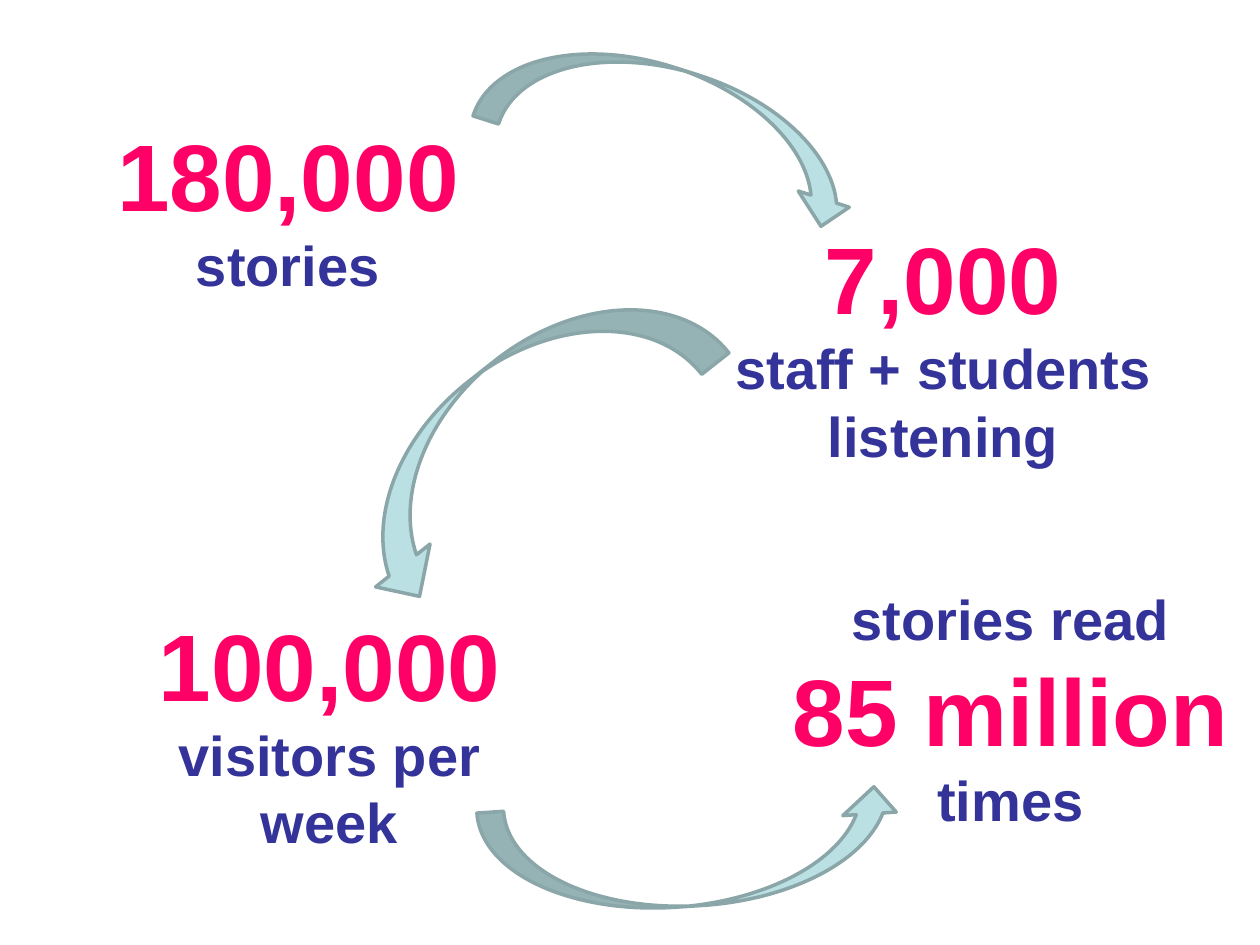
from pptx import Presentation
from pptx.dml.color import RGBColor
from pptx.enum.shapes import MSO_SHAPE
from pptx.enum.text import MSO_AUTO_SIZE, PP_ALIGN
from pptx.util import Inches, Pt

COLORS = {"figure": "FF0066", "caption": "333399", "arrow": "BBE0E3", "outline": "8AA6A8"}
SIZES = {"figure": 54, "caption": 32}


def color(name):
    return RGBColor.from_string(COLORS[name])


presentation = Presentation()
presentation.slide_width = Inches(10)
presentation.slide_height = Inches(7.5)
slide = presentation.slides.add_slide(presentation.slide_layouts[6])

# Statistics: box, then (style, text) for each paragraph
statistics = [
    ((0.59, 0.88, 3.39, 1.55), [("figure", "180,000"), ("caption", "stories")]),
    ((0.92, 4.77, 3.39, 2.09), [("figure", "100,000"), ("caption", "visitors per week")]),
    ((6.16, 4.59, 3.72, 2.15),
     [("caption", "stories read"), ("figure", "85 million"), ("caption", "times")]),
    ((5.24, 1.7, 4.49, 2.09), [("figure", "7,000"), ("caption", "staff + students listening")]),
]
for box, lines in statistics:
    text_frame = slide.shapes.add_textbox(*map(Inches, box)).text_frame
    text_frame.word_wrap = True
    text_frame.auto_size = MSO_AUTO_SIZE.SHAPE_TO_FIT_TEXT
    text_frame.text = "\n".join(text for _, text in lines)
    for paragraph, (style, _) in zip(text_frame.paragraphs, lines):
        paragraph.alignment = PP_ALIGN.CENTER
        paragraph.font.name = "Arial"
        paragraph.font.bold = True
        paragraph.font.size = Pt(SIZES[style])
        paragraph.font.color.rgb = color(style)

# Curved arrows: box, rotation, flip attribute
arrows = [
    ((4.94, -0.57, 0.85, 3.11), 287.6, None),
    ((5.07, 5.08, 0.85, 3.37), 86.2, "flipV"),
    ((3.56, 1.72, 1.1, 3.4), 51.8, "flipH"),
]
for box, rotation, flip in arrows:
    arrow = slide.shapes.add_shape(MSO_SHAPE.CURVED_LEFT_ARROW, *map(Inches, box))
    arrow.rotation = rotation
    if flip:
        arrow.element.spPr.xfrm.set(flip, "1")
    arrow.shadow.inherit = False
    arrow.fill.solid()
    arrow.fill.fore_color.rgb = color("arrow")
    arrow.line.color.rgb = color("outline")
    arrow.line.width = Pt(2)

presentation.save("out.pptx")
